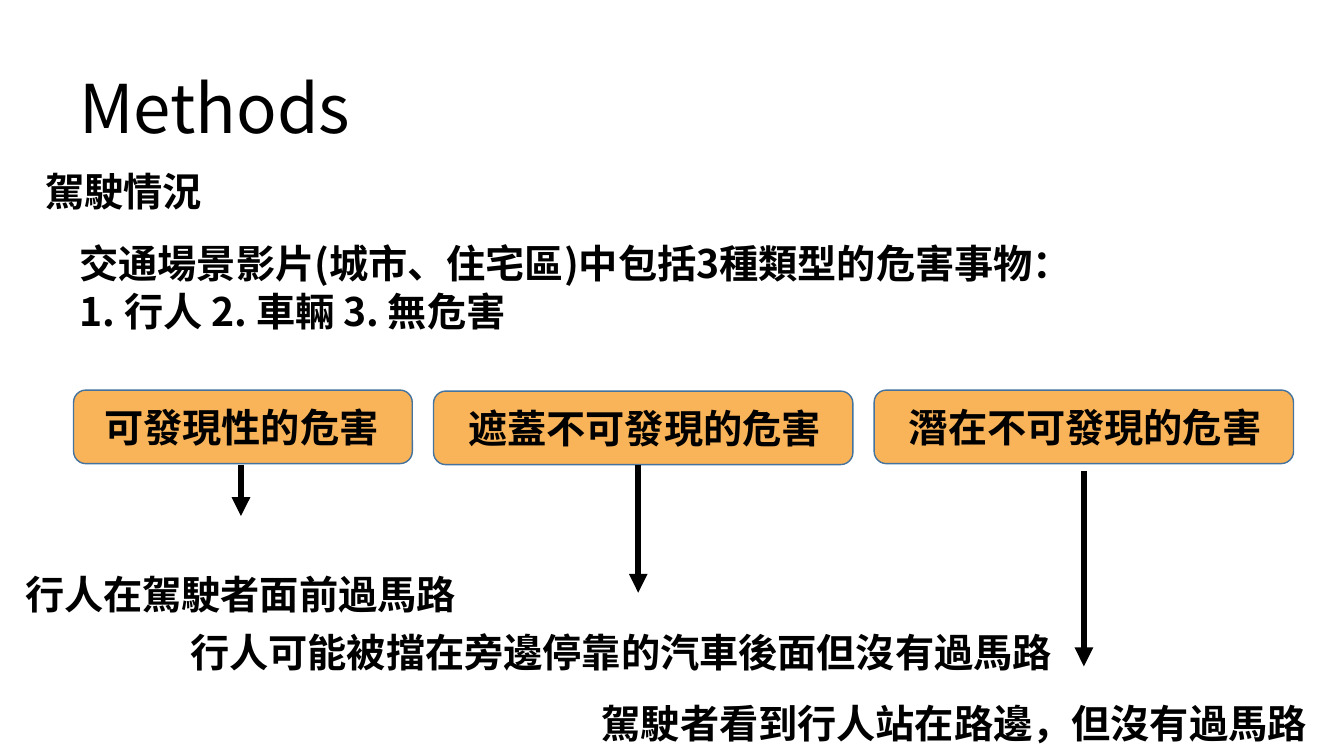
from lxml import etree
from pptx import Presentation
from pptx.dml.color import RGBColor
from pptx.enum import shapes, text
from pptx.oxml import ns
from pptx.util import Inches, Pt

FONT = "Noto Sans CJK SC"
BLACK, ORANGE, BLUE = "000000", "F9B359", "43739E"

# Content: words, left, top, width, height, size, bold, wrap
TEXTS = [
    ("Methods", 0.69, 0.61, 12, 0.91, 48, False, True),
    ("駕駛情況", 0.35, 1.61, 2.5, 0.57, 28, True, True),
    ("交通場景影片(城市、住宅區)中包括3種類型的危害事物：1. 行人 2. 車輛 3. 無危害",
     0.69, 2.33, 10.06, 1.04, 28, True, True),
    ("行人在駕駛者面前過馬路", 0.15, 5.61, 4.52, 0.57, 28, True, False),
    ("行人可能被擋在旁邊停靠的汽車後面但沒有過馬路",
     1.79, 6.18, 8.84, 0.57, 28, True, False),
    ("駕駛者看到行人站在路邊，但沒有過馬路",
     5.87, 6.89, 7.27, 0.57, 28, True, False),
]
# Hazard boxes: words, left, top, width, text inset
HAZARDS = [
    ("可發現性的危害", 0.73, 3.87, 3.36, 0.27),
    ("遮蓋不可發現的危害", 4.3, 3.88, 4.16, 0.31),
    ("潛在不可發現的危害", 8.67, 3.87, 4.16, 0.31),
]
BOX_H = 0.73
# Arrows: x, top, bottom
ARROWS = [(2.39, 4.61, 5.12), (6.33, 4.61, 5.88), (10.75, 4.67, 6.61)]


def color(code):
    return RGBColor.from_string(code)


def write(frame, words, size, bold):
    para = frame.paragraphs[0]
    para.alignment = text.PP_ALIGN.LEFT
    run = para.add_run()
    run.text = words
    font = run.font
    font.name, font.size, font.bold = FONT, Pt(size), bold
    font.color.rgb = color(BLACK)
    # East Asian glyphs need their own font entry
    east = etree.SubElement(run._r.get_or_add_rPr(), ns.qn("a:ea"))
    east.set("typeface", FONT)


prs = Presentation()
prs.slide_width, prs.slide_height = Inches(13.33), Inches(7.5)
slide = prs.slides.add_slide(prs.slide_layouts[6])

# Title and sentences
for words, left, top, width, height, size, bold, wrap in TEXTS:
    box = slide.shapes.add_textbox(*map(Inches, (left, top, width, height)))
    box.text_frame.word_wrap = wrap
    write(box.text_frame, words, size, bold)

# Hazard boxes
for words, left, top, width, inset in HAZARDS:
    box = slide.shapes.add_shape(
        shapes.MSO_SHAPE.ROUNDED_RECTANGLE,
        *map(Inches, (left, top, width, BOX_H)))
    box.shadow.inherit = False
    box.fill.solid()
    box.fill.fore_color.rgb = color(ORANGE)
    box.line.color.rgb = color(BLUE)
    box.line.width = Pt(1)
    frame = box.text_frame
    frame.margin_left = Inches(inset)
    frame.vertical_anchor = text.MSO_ANCHOR.MIDDLE
    write(frame, words, 28, True)

# Arrows down to the explanations
for x, top, bottom in ARROWS:
    arrow = slide.shapes.add_connector(
        shapes.MSO_CONNECTOR.STRAIGHT, *map(Inches, (x, top, x, bottom)))
    arrow.line.color.rgb = color(BLACK)
    arrow.line.width = Pt(4.5)
    tail = etree.SubElement(arrow.line._get_or_add_ln(), ns.qn("a:tailEnd"))
    tail.set("type", "triangle")
    etree.SubElement(arrow._element.spPr, ns.qn("a:effectLst"))

prs.save("out.pptx")
